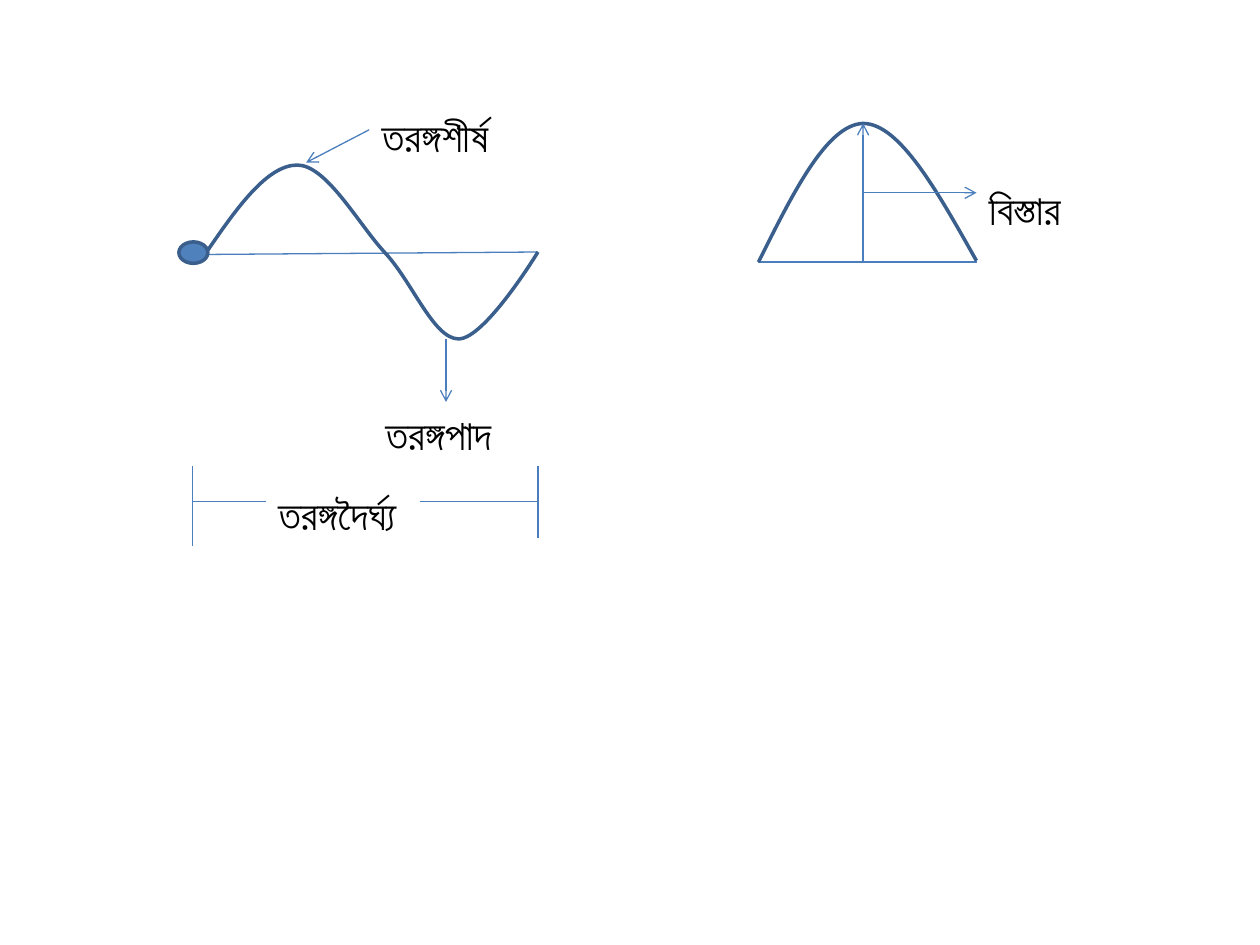
import pptx
import pptx.util
import pptx.dml.color
import pptx.enum.shapes
import pptx.enum.text
import pptx.oxml
import pptx.oxml.ns
from pptx.util import Inches

LINE = pptx.dml.color.RGBColor(0x4B, 0x7E, 0xBC)
CURVE = pptx.dml.color.RGBColor(0x3A, 0x5F, 0x8C)
FILL = pptx.dml.color.RGBColor(0x4F, 0x81, 0xBD)
BLACK = pptx.dml.color.RGBColor(0, 0, 0)
FONT = {"name": "Lato", "size": pptx.util.Pt(24)}
NS = pptx.oxml.ns.nsdecls("a")

prs = pptx.Presentation()
prs.slide_width, prs.slide_height = Inches(10), Inches(7.5)
s = prs.slides.add_slide(prs.slide_layouts[6])


def add_curve(points):
    """Draw cubic Beziers: a start, then control, control, end per segment."""
    start, *rest = [(Inches(x), Inches(y)) for x, y in points]
    builder = s.shapes.build_freeform(*start)
    builder.add_line_segments(rest, close=False)
    sp = builder.convert_to_shape()
    segments = sp._element.xpath(".//a:path/a:lnTo")
    for i in range(0, len(segments), 3):
        bezier = pptx.oxml.parse_xml(f"<a:cubicBezTo {NS}/>")
        segments[i].addprevious(bezier)
        for segment in segments[i:i + 3]:
            bezier.append(segment[0])
            segment.getparent().remove(segment)
    sp.fill.background()
    sp.shadow.inherit = False
    sp.line.color.rgb = CURVE
    sp.line.width = pptx.util.Pt(2)


def add_line(x1, y1, x2, y2, arrow=False):
    c = s.shapes.add_connector(pptx.enum.shapes.MSO_CONNECTOR.STRAIGHT,
                               Inches(x1), Inches(y1), Inches(x2), Inches(y2))
    c.line.color.rgb = LINE
    c.line.width = pptx.util.Pt(0.75)
    if arrow:
        c.line._get_or_add_ln().append(
            pptx.oxml.parse_xml(f'<a:tailEnd {NS} type="arrow"/>'))
    c._element.spPr.append(pptx.oxml.parse_xml(f"<a:effectLst {NS}/>"))


# Full wave with its axis and source
add_line(1.62, 2.02, 4.27, 2)
add_curve([(1.64, 2), (1.88, 1.65), (2.12, 1.31), (2.36, 1.31),
           (2.59, 1.31), (2.84, 1.77), (3.05, 2),
           (3.27, 2.23), (3.44, 2.69), (3.64, 2.69),
           (3.85, 2.69), (4.27, 2), (4.27, 2)])
source = s.shapes.add_shape(pptx.enum.shapes.MSO_SHAPE.OVAL, Inches(1.42),
                            Inches(1.92), Inches(0.23), Inches(0.17))
source.shadow.inherit = False
source.fill.solid()
source.fill.fore_color.rgb = FILL
source.line.color.rgb = CURVE
source.line.width = pptx.util.Pt(2)

# Crest and trough pointers
add_line(2.93, 1.03, 2.43, 1.29, arrow=True)
add_line(3.54, 2.69, 3.54, 3.19, arrow=True)

# Wavelength limits and measure
add_line(1.53, 3.7, 1.53, 4.33)
add_line(4.27, 3.7, 4.27, 4.27)
add_line(1.53, 3.98, 2.11, 3.98)
add_line(3.33, 3.98, 4.27, 3.98)

# Single crest with its amplitude
add_line(6.02, 2.08, 7.75, 2.08)
add_curve([(6.02, 2.08), (6.29, 1.54), (6.56, 0.99), (6.85, 0.98),
           (7.14, 0.98), (7.44, 1.52), (7.75, 2.07)])
add_line(6.85, 2.08, 6.85, 0.98, arrow=True)
add_line(6.85, 1.53, 7.75, 1.53, arrow=True)

labels = [
    ("তরঙ্গশীর্ষ", 2.93, 0.83, 1.82),
    ("তরঙ্গপাদ", 2.96, 3.19, 1.79),
    ("তরঙ্গদৈর্ঘ্য", 2.11, 3.83, 1.67),
    ("বিস্তার", 7.75, 1.41, 1.33),
]
for text, x, y, width in labels:
    sp = s.shapes.add_textbox(Inches(x), Inches(y), Inches(width), Inches(0.5))
    tf = sp.text_frame
    tf.word_wrap = True
    tf.auto_size = pptx.enum.text.MSO_AUTO_SIZE.SHAPE_TO_FIT_TEXT
    r = tf.paragraphs[0].add_run()
    r.text = text
    for key, value in FONT.items():
        setattr(r.font, key, value)
    r.font.color.rgb = BLACK

prs.save("out.pptx")
